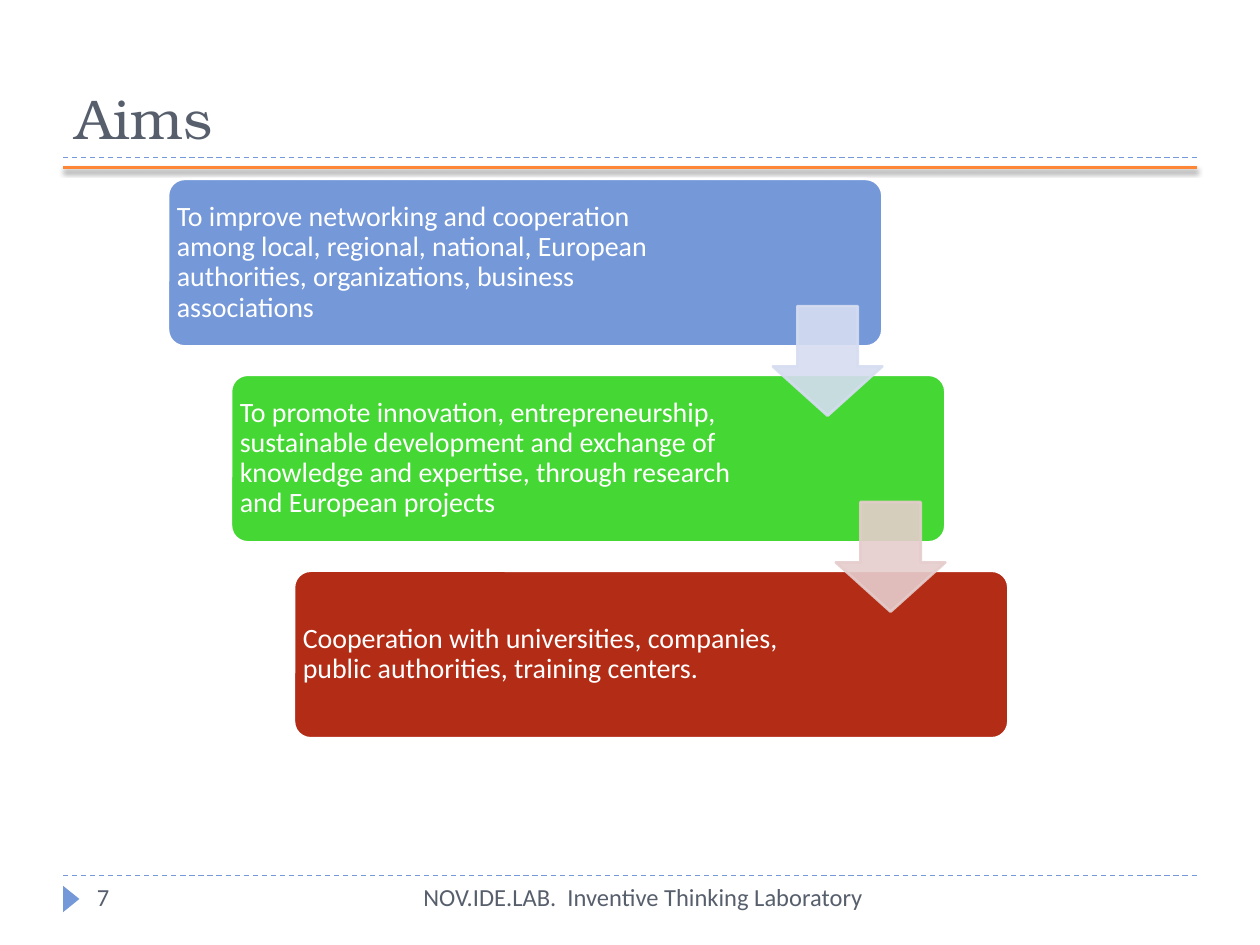
from dataclasses import dataclass

import pptx
import pptx.dml.color
import pptx.enum.dml
import pptx.enum.shapes
import pptx.enum.text
import pptx.oxml
import pptx.oxml.ns
import pptx.util

Inches = pptx.util.Inches
Pt = pptx.util.Pt
Shape = pptx.enum.shapes.MSO_SHAPE
Align = pptx.enum.text.PP_ALIGN
Anchor = pptx.enum.text.MSO_ANCHOR
Dash = pptx.enum.dml.MSO_LINE


@dataclass(frozen=True)
class Theme:
    head: str = "TeX Gyre Bonum"
    body: str = "Calibri"
    ink: str = "575F6D"
    blue: str = "7598D9"
    green: str = "45D834"
    red: str = "B32C16"
    orange: str = "FE8637"
    white: str = "FFFFFF"
    pale: str = "D6DDF1"
    rose: str = "E5CDCC"
    title: int = 32
    text: int = 16
    foot: int = 14
    thin: float = 0.75
    thick: float = 1.5


THEME = Theme()
WIDE, HIGH = 10, 7.5
EDGE = WIDE / 20
LEFT, TOP = WIDE * 2 / 15, 1.42
STEP_X, STEP_Y = EDGE, 1.555
CARD_W, CARD_H = 5.67, 1.33
TEXT_W, PAD = 4.3, 0.07
ARROW_X, ARROW_Y, ARROW = 4.8, 1.01, 0.87

STEPS = [
    ("To improve networking and cooperation among local, regional, national, "
     "European authorities, organizations, business associations", THEME.blue),
    ("To promote innovation, entrepreneurship, sustainable development and exchange "
     "of knowledge and expertise, through research and European projects", THEME.green),
    ("Cooperation with universities, companies, public authorities, training centers.",
     THEME.red),
]


def rgb(code):
    return pptx.dml.color.RGBColor.from_string(code)


def box(x, y, w, h):
    return [Inches(v) for v in (x, y, w, h)]


def effect(shape, inner=""):
    space = pptx.oxml.ns.nsdecls("a")
    node = pptx.oxml.parse_xml(f"<a:effectLst {space}>{inner}</a:effectLst>")
    shape._element.spPr.append(node)


def fade(shape, share):
    for color in shape._element.spPr.iter(pptx.oxml.ns.qn("a:srgbClr")):
        alpha = color.makeelement(pptx.oxml.ns.qn("a:alpha"), {"val": str(share * 1000)})
        color.append(alpha)


def write(frame, text, size, color, font, anchor, pads, align=Align.LEFT):
    frame.word_wrap = True
    frame.auto_size = pptx.enum.text.MSO_AUTO_SIZE.NONE
    frame.vertical_anchor = anchor
    frame.margin_left, frame.margin_top, frame.margin_right, frame.margin_bottom = map(Inches, pads)
    para = frame.paragraphs[0]
    para.alignment = align
    run = para.add_run()
    run.text = text
    run.font.size = Pt(size)
    run.font.name = font
    run.font.color.rgb = rgb(color)
    return para


def rule(slide, y, color, width, dash=None, shade=""):
    line = slide.shapes.add_connector(
        pptx.enum.shapes.MSO_CONNECTOR.STRAIGHT,
        Inches(EDGE), Inches(y), Inches(WIDE - EDGE), Inches(y))
    line.line.color.rgb = rgb(color)
    line.line.width = Pt(width)
    if dash:
        line.line.dash_style = dash
    effect(line, shade)


def solid(slide, kind, place, fill, line=None, adjust=()):
    shape = slide.shapes.add_shape(kind, *box(*place))
    shape.shadow.inherit = False
    shape.fill.solid()
    shape.fill.fore_color.rgb = rgb(fill)
    if line:
        shape.line.color.rgb = rgb(line)
        shape.line.width = Pt(THEME.thick)
    else:
        shape.line.fill.background()
    for index, value in enumerate(adjust):
        shape.adjustments[index] = value
    return shape


def title(slide, text):
    shape = slide.shapes.title
    shape.left, shape.top, shape.width, shape.height = box(EDGE, 0.17, WIDE - 2 * EDGE, 1.08)
    write(shape.text_frame, text, THEME.title, THEME.ink, THEME.head,
          Anchor.BOTTOM, (0.1, 0.05, 0.1, 0.05))


def foot(slide, text, x, w, align, right=0.1):
    label = slide.shapes.add_textbox(*box(x, 6.95, w, 0.4))
    write(label.text_frame, text, THEME.foot, THEME.ink, THEME.body,
          Anchor.TOP, (0.1, 0.05, right, 0.05), align)


def card(slide, index, text, fill):
    x, y = LEFT + index * STEP_X, TOP + index * STEP_Y
    solid(slide, Shape.ROUNDED_RECTANGLE, (x, y, CARD_W, CARD_H), fill, THEME.white, (0.1,))
    label = slide.shapes.add_textbox(*box(x, y, TEXT_W, CARD_H))
    para = write(label.text_frame, text, THEME.text, THEME.white, THEME.body,
                 Anchor.MIDDLE, (PAD,) * 4)
    para.line_spacing = 0.9


def arrow(slide, index, color):
    x = LEFT + index * STEP_X + ARROW_X
    y = TOP + index * STEP_Y + ARROW_Y
    shape = solid(slide, Shape.DOWN_ARROW, (x, y, ARROW, ARROW), color, color, (0.55, 0.45))
    fade(shape, 90)


def main():
    deck = pptx.Presentation()
    deck.slide_width, deck.slide_height = Inches(WIDE), Inches(HIGH)
    slide = deck.slides.add_slide(deck.slide_layouts[5])

    for y in (6.95, 1.25):
        rule(slide, y, THEME.blue, THEME.thin, Dash.DASH)
    mark = solid(slide, Shape.ISOSCELES_TRIANGLE, (0.46, 7.07, 0.21, 0.13), THEME.blue)
    mark.rotation = 90
    title(slide, "Aims")
    foot(slide, "NOV.IDE.LAB.  Inventive Thinking Laboratory", 3.17, 3.83, Align.RIGHT, 0.15)
    foot(slide, "7", 0.67, 2.17, Align.LEFT)
    shade = (f'<a:outerShdw blurRad="{Pt(3)}" dist="{Pt(2)}" dir="5400000" rotWithShape="0">'
             '<a:srgbClr val="000000"><a:alpha val="40000"/></a:srgbClr></a:outerShdw>')
    rule(slide, 1.33, THEME.orange, THEME.thick, shade=shade)

    for index, (text, fill) in enumerate(STEPS):
        card(slide, index, text, fill)
    for index, color in enumerate((THEME.pale, THEME.rose)):
        arrow(slide, index, color)

    deck.save("out.pptx")


if __name__ == "__main__":
    main()
